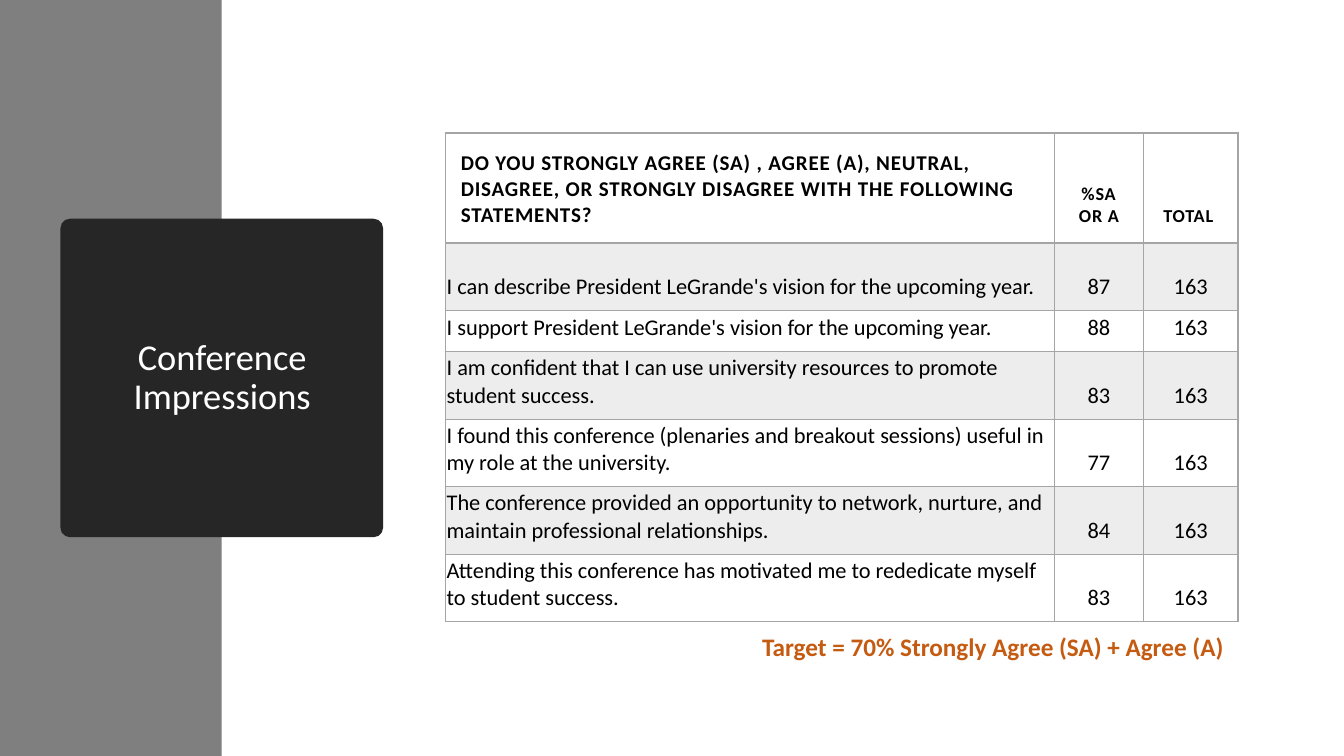
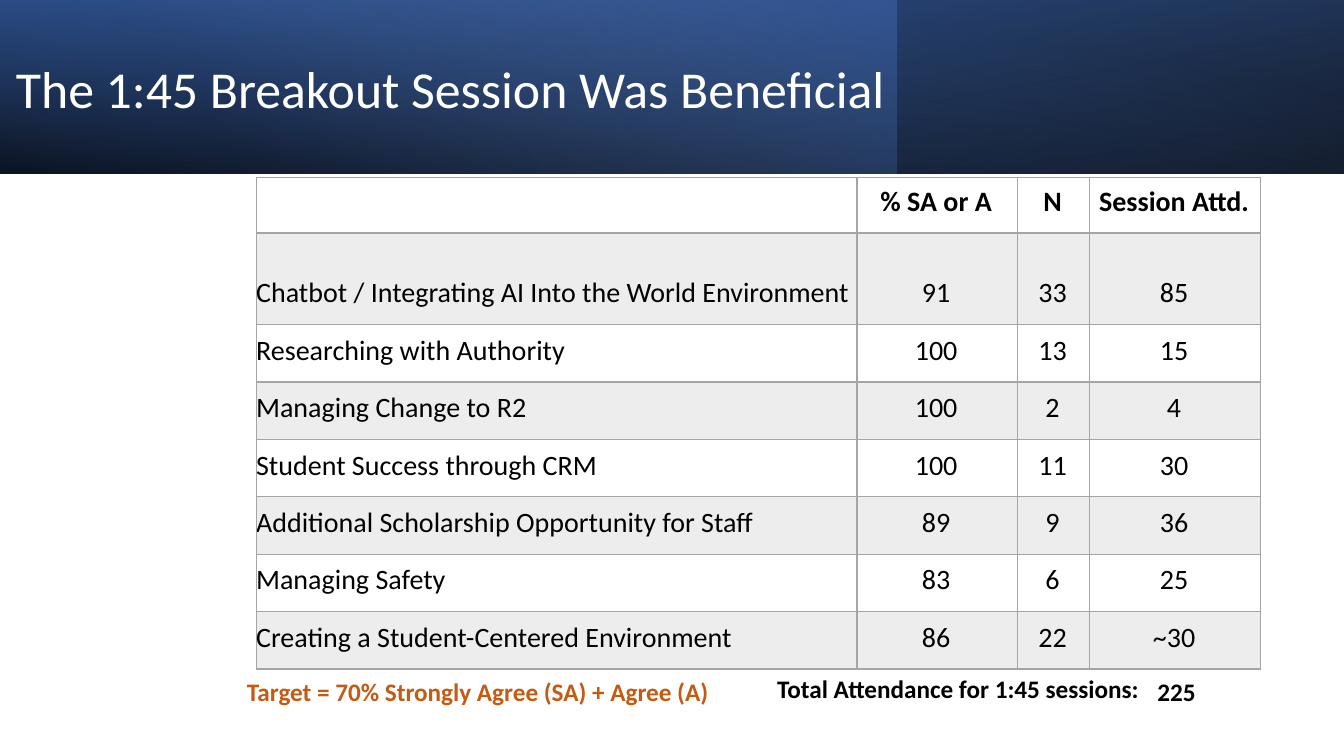
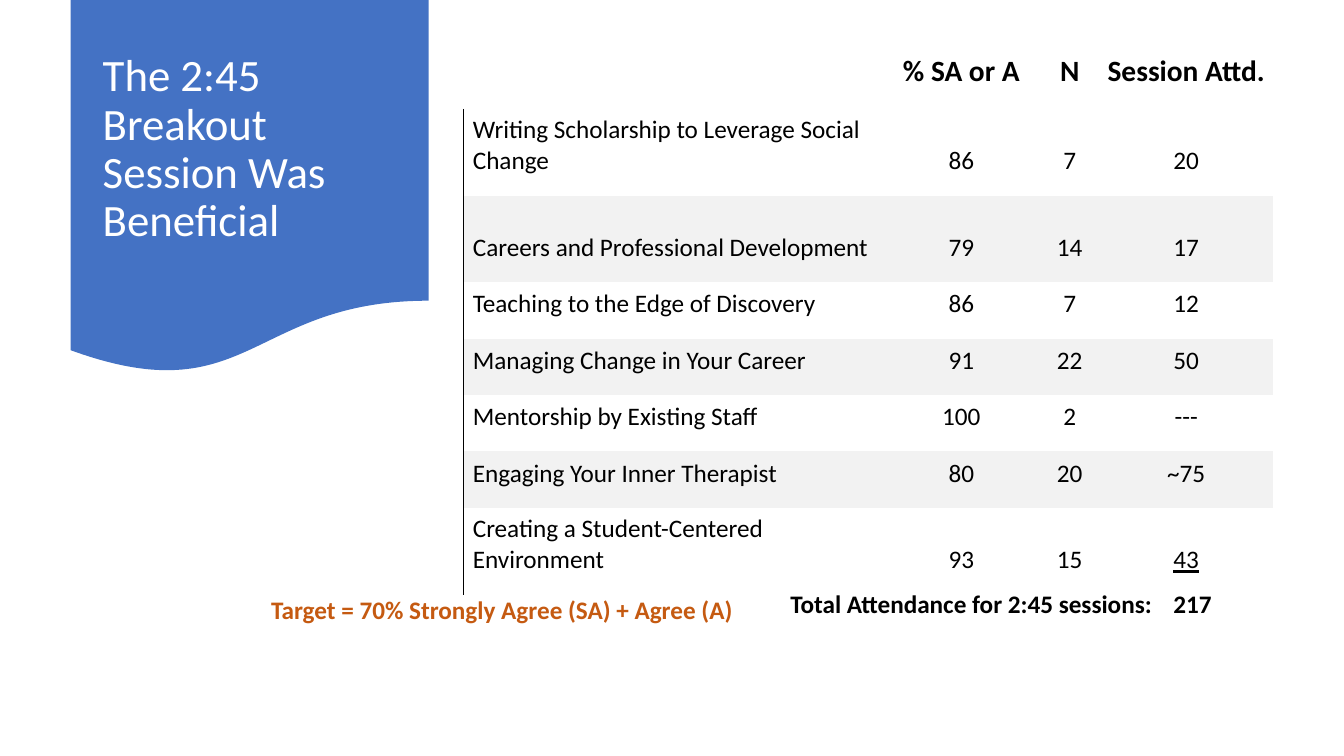
import pptx
import pptx.util
import pptx.dml.color
import pptx.enum.shapes
import pptx.enum.text
import pptx.oxml
import pptx.oxml.ns

Inches = pptx.util.Inches
Pt = pptx.util.Pt
RGBColor = pptx.dml.color.RGBColor
MSO_SHAPE = pptx.enum.shapes.MSO_SHAPE
PP_ALIGN = pptx.enum.text.PP_ALIGN
MSO_ANCHOR = pptx.enum.text.MSO_ANCHOR
qn = pptx.oxml.ns.qn

FONT = "Calibri"
WHITE = RGBColor(0xFF, 0xFF, 0xFF)
BLACK = RGBColor(0x00, 0x00, 0x00)
CHARCOAL = RGBColor(0x26, 0x26, 0x26)
GRAY = RGBColor(0x7F, 0x7F, 0x7F)
BORDER_GRAY = RGBColor(0xA5, 0xA5, 0xA5)
BAND_GRAY = RGBColor(0xED, 0xED, 0xED)
LIGHT_GRAY = RGBColor(0xF2, 0xF2, 0xF2)
BLUE = RGBColor(0x44, 0x72, 0xC4)
DARK_BLUE = RGBColor(0x2F, 0x55, 0x97)
PALE_BLUE = RGBColor(0x8F, 0xAA, 0xDC)
ORANGE = RGBColor(0xC5, 0x5A, 0x11)
NO_STYLE = "{2D5ABB26-0587-4C30-8999-92F81FD0307C}"
TARGET = "Target = 70% Strongly Agree (SA) + Agree (A)"


def add_text(page, place, text, size, color, title=False, align=PP_ALIGN.LEFT):
    box = page.shapes.add_textbox(*[Inches(n) for n in place])
    frame = box.text_frame
    frame.word_wrap = True
    frame.text = text
    para = frame.paragraphs[0]
    para.alignment = align
    if title:
        frame.vertical_anchor = MSO_ANCHOR.MIDDLE
        para.line_spacing = 0.9
    font = para.runs[0].font
    font.name, font.size, font.bold = FONT, Pt(size), not title
    font.color.rgb = color


def add_grid(page, left, top, widths, heights, rows, head_sizes, body_size,
             head_insets, insets, shaded, shade, borders):
    frame = page.shapes.add_table(
        len(rows), len(widths), Inches(left), Inches(top),
        Inches(sum(widths)), Inches(sum(heights)))
    table = frame.table
    table.first_row = table.horz_banding = False
    for style in frame.element.iter(qn("a:tableStyleId")):
        style.text = NO_STYLE
    for column, width in zip(table.columns, widths):
        column.width = Inches(width)
    for r, (row, height) in enumerate(zip(rows, heights)):
        table.rows[r].height = Inches(height)
        for c, text in enumerate(row):
            cell = table.cell(r, c)
            cell.text = text
            cell.vertical_anchor = MSO_ANCHOR.BOTTOM
            margins = insets if r else head_insets
            (cell.margin_left, cell.margin_top, cell.margin_right,
             cell.margin_bottom) = [Inches(n) for n in margins]
            para = cell.text_frame.paragraphs[0]
            para.alignment = PP_ALIGN.CENTER if c else PP_ALIGN.LEFT
            for span in para.runs:
                span.font.name = FONT
                span.font.size = Pt(body_size if r else head_sizes[c])
                span.font.bold = r == 0
                span.font.color.rgb = BLACK
            for side, width, color in borders(r, c):
                cell._tc.get_or_add_tcPr().append(pptx.oxml.parse_xml(
                    f'<a:ln{side} {pptx.oxml.ns.nsdecls("a")} w="{Pt(width)}">'
                    f'<a:solidFill><a:srgbClr val="{color}"/></a:solidFill></a:ln{side}>'))
            if r in shaded:
                cell.fill.solid()
                cell.fill.fore_color.rgb = shade
            else:
                cell.fill.background()
    return table


def gray_borders(r, c):
    return [(side, 2 if r == 0 and side == "B" else 1, BORDER_GRAY) for side in "LRTB"]


def left_rule(r, c):
    return [("L", 0.75, BLACK)] if r and c == 0 else []


deck = pptx.Presentation()
deck.slide_width, deck.slide_height = Inches(13.33), Inches(7.5)
impressions, early, late = [deck.slides.add_slide(deck.slide_layouts[6]) for _ in range(3)]

panels = []
for page, kind, place, color in [
    (impressions, MSO_SHAPE.RECTANGLE, (0, 0, 2.2, 7.5), GRAY),
    (impressions, MSO_SHAPE.ROUNDED_RECTANGLE, (0.6, 2.17, 3.2, 3.16), CHARCOAL),
    (early, MSO_SHAPE.RECTANGLE, (0, 0, 13.33, 1.72), DARK_BLUE),
    (early, MSO_SHAPE.RECTANGLE, (0, 0, 8.89, 1.72), BLUE),
    (early, MSO_SHAPE.RECTANGLE, (0, 0, 13.33, 1.72), BLUE),
    (late, MSO_SHAPE.FLOWCHART_DOCUMENT, (0.7, 0, 3.55, 3.72), BLUE),
]:
    panel = page.shapes.add_shape(kind, *[Inches(n) for n in place])
    panel.shadow.inherit = False
    panel.fill.solid()
    panel.fill.fore_color.rgb = color
    panel.line.fill.background()
    panels.append(panel)
panels[1].adjustments[0] = 0.03

for panel, turn, flip, angle, stops in [
    (panels[2], 180, True, 100, [(0, BLACK, 96), (100, DARK_BLUE, 100)]),
    (panels[3], 0, False, 140, [(0, BLUE, 41), (74, PALE_BLUE, 0)]),
    (panels[4], 0, True, 260, [(0, BLACK, 63), (78, BLUE, 15)]),
]:
    panel.rotation = turn
    properties = panel.element.spPr
    if flip:
        properties.find(qn("a:xfrm")).set("flipH", "1")
    marks = "".join(
        f'<a:gs pos="{position * 1000}"><a:srgbClr val="{color}">'
        f'<a:alpha val="{alpha * 1000}"/></a:srgbClr></a:gs>'
        for position, color, alpha in stops)
    properties.replace(properties.find(qn("a:solidFill")), pptx.oxml.parse_xml(
        f'<a:gradFill {pptx.oxml.ns.nsdecls("a")} rotWithShape="1"><a:gsLst>{marks}</a:gsLst>'
        f'<a:lin ang="{angle * 60000}" scaled="0"/></a:gradFill>'))

add_text(impressions, (0.7, 2.27, 3.01, 2.96), "Conference Impressions", 26, WHITE,
         True, PP_ALIGN.CENTER)
add_text(early, (0.06, 0.27, 9.52, 1.27), "The 1:45 Breakout Session Was Beneficial",
         37, WHITE, True)
add_text(late, (0.92, 0.19, 3.11, 2.59), "The 2:45 Breakout Session Was Beneficial",
         32, WHITE, True)

statements = [
    ("DO YOU STRONGLY AGREE (SA) , AGREE (A), NEUTRAL, DISAGREE, OR STRONGLY DISAGREE "
     "WITH THE FOLLOWING STATEMENTS?", "%SA OR A", "TOTAL "),
    ("I can describe President LeGrande's vision for the upcoming year.", "87", "163"),
    ("I support President LeGrande's vision for the upcoming year.", "88", "163"),
    ("I am confident that I can use university resources to promote student success.",
     "83", "163"),
    ("I found this conference (plenaries and breakout sessions) useful in my role at "
     "the university.", "77", "163"),
    ("The conference provided an opportunity to network, nurture, and maintain "
     "professional relationships.", "84", "163"),
    ("Attending this conference has motivated me to rededicate myself to student success.",
     "83", "163"),
]
survey = add_grid(
    impressions, 4.42, 1.32, [6.04, 0.88, 0.94], [1.09, 0.67, 0.41] + [0.67] * 4,
    statements, [15, 13, 13], 16, [0.15] * 4, [0.01, 0.01, 0.01, 0.1],
    (1, 3, 5), BAND_GRAY, gray_borders)
for cell in survey.rows[0].cells:
    cell.text_frame.paragraphs[0].runs[0].font._element.set("spc", "60")

early_sessions = [
    ("", "% SA or A", "N", "Session Attd."),
    ("Chatbot / Integrating AI Into the World Environment", "91", "33", "85"),
    ("Researching with Authority", "100", "13", "15"),
    ("Managing Change to R2", "100", "2", "4"),
    ("Student Success through CRM", "100", "11", "30"),
    ("Additional Scholarship Opportunity for Staff", "89", "9", "36"),
    ("Managing Safety", "83", "6", "25"),
    ("Creating a Student-Centered Environment", "86", "22", "~30"),
]
add_grid(
    early, 2.54, 1.76, [5.96, 1.59, 0.72, 1.69], [0.55, 0.91] + [0.57] * 6,
    early_sessions, [20] * 4, 20, [0, 0.03, 0.02, 0.14], [0, 0.04, 0.02, 0.14],
    (1, 3, 5, 7), BAND_GRAY, gray_borders)

late_sessions = [
    ("", "% SA or A", "N", "Session Attd."),
    ("Writing Scholarship to Leverage Social Change", "86", "7", "20"),
    ("Careers and Professional Development", "79", "14", "17"),
    ("Teaching to the Edge of Discovery", "86", "7", "12"),
    ("Managing Change in Your Career", "91", "22", "50"),
    ("Mentorship by Existing Staff", "100", "2", "---"),
    ("Engaging Your Inner Therapist", "80", "20", "~75"),
    ("Creating a Student-Centered Environment", "93", "15", "43"),
]
late_insets = [0.09, 0.03, 0.02, 0.19]
attendance = add_grid(
    late, 4.6, 0.13, [4.08, 1.64, 0.51, 1.8], [0.95, 0.86, 0.86] + [0.56] * 4 + [0.86],
    late_sessions, [21] * 4, 18, late_insets, late_insets,
    (2, 4, 6), LIGHT_GRAY, left_rule)
attendance.cell(7, 3).text_frame.paragraphs[0].runs[0].font.underline = True

for page, left, top, width, text, color in [
    (impressions, 7.46, 6.21, 5, TARGET, ORANGE),
    (early, 2.35, 6.66, 5, TARGET, ORANGE),
    (early, 7.61, 6.63, 4, "Total Attendance for 1:45 sessions:", BLACK),
    (early, 11.38, 6.66, 0.7, "225", BLACK),
    (late, 2.59, 5.85, 5, TARGET, ORANGE),
    (late, 7.74, 5.79, 4, "Total Attendance for 2:45 sessions:", BLACK),
    (late, 11.54, 5.79, 0.7, "217", BLACK),
]:
    add_text(page, (left, top, width, 0.4), text, 18, color)

deck.save("out.pptx")
